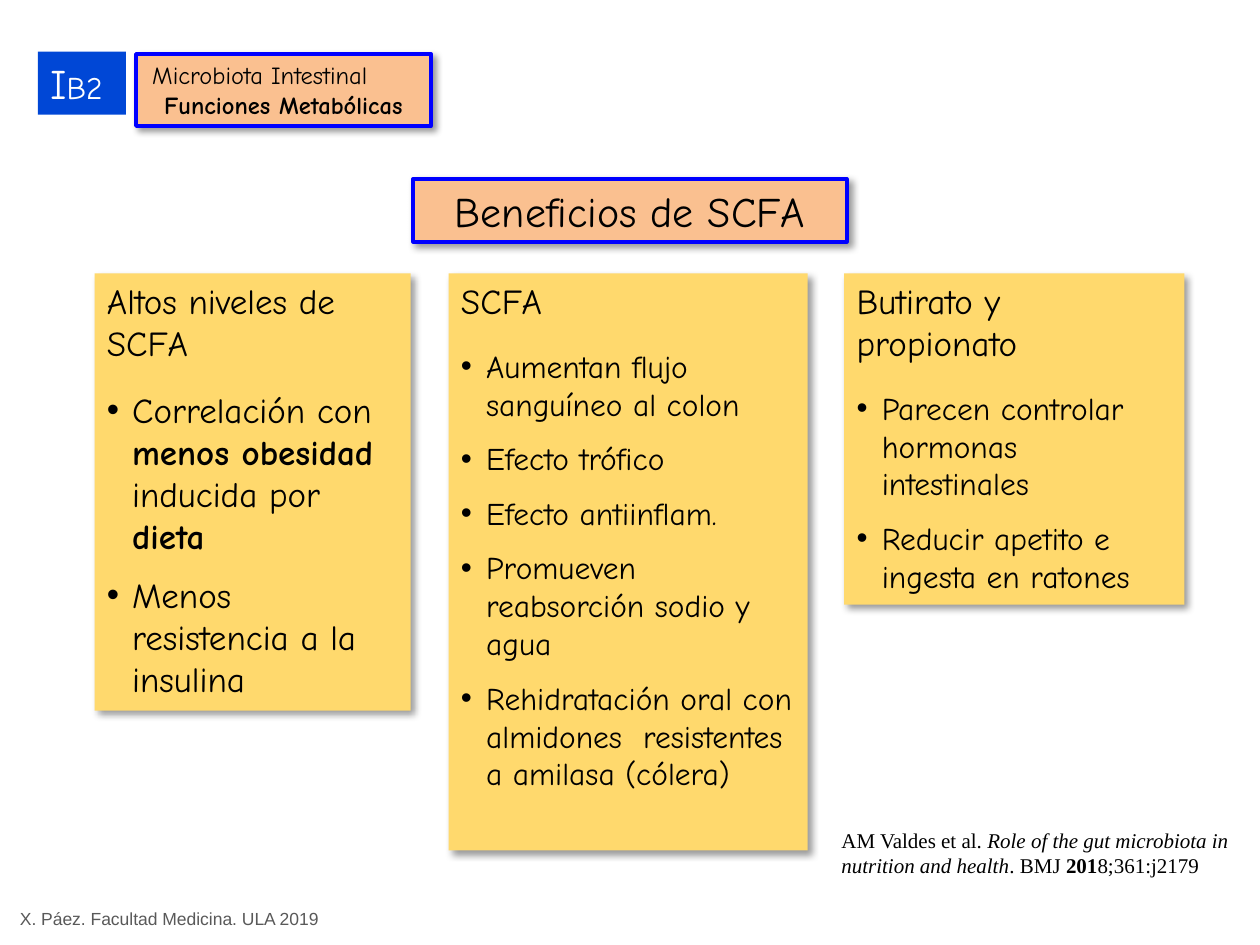
from dataclasses import dataclass

from lxml.etree import SubElement
from pptx import Presentation
from pptx.dml.color import RGBColor
from pptx.enum.shapes import MSO_SHAPE as Shape
from pptx.enum.text import MSO_ANCHOR as Anchor, PP_ALIGN as Align
from pptx.oxml import parse_xml
from pptx.oxml.ns import nsdecls, qn
from pptx.util import Inches, Pt


@dataclass(frozen=True)
class Theme:
    hand: str = "Comic Neue"
    sans: str = "Arial"
    serif: str = "Times New Roman"
    black: str = "000000"
    white: str = "FFFFFF"
    gray: str = "595959"
    badge: str = "0047D6"
    border: str = "0000FF"
    peach: str = "FAC090"
    yellow: str = "FFD96D"
    title: int = 24
    heading: int = 20
    body: int = 18
    small: int = 14
    citation: int = 12
    footer: int = 10
    heading_gap: float = 14.4
    item_gap: float = 9.6


THEME = Theme()
COLUMN_TOP = 2.17
HANG = 0.2

COLUMNS = [
    {"left": 0.75, "width": 2.51, "height": 3.47, "size": THEME.heading,
     "heading": "Altos niveles de SCFA",
     "items": [
         [[("Correlación con ", ""), ("menos obesidad ", "b"),
           ("inducida por ", ""), ("dieta", "b")]],
         [[("Menos", "")], [("resistencia a la insulina", "")]],
     ]},
    {"left": 3.56, "width": 2.85, "height": 4.58, "size": THEME.body,
     "heading": "SCFA",
     "items": [
         [[("Aumentan flujo sanguíneo al colon", "")]],
         [[("Efecto trófico", "")]],
         [[("Efecto antiinflam.", "")]],
         [[("Promueven reabsorción sodio y agua", "")]],
         [[("Rehidratación oral con almidones  resistentes a amilasa (cólera)", "")]],
     ]},
    {"left": 6.7, "width": 2.7, "height": 2.63, "size": THEME.body,
     "heading": "Butirato y propionato",
     "items": [
         [[("Parecen controlar hormonas intestinales", "")]],
         [[("Reducir apetito e ingesta en ratones", "")]],
     ]},
]

CITATION = [
    ("AM Valdes et al. ", ""),
    ("Role of the gut microbiota in nutrition and health", "i"),
    (". BMJ ", ""), ("201", "b"), ("8;361:j2179", ""),
]


def add_span(para, text, size, font=THEME.hand, color=THEME.black, style=""):
    span = para.add_run()
    span.text = text
    span.font.name = font
    span.font.size = Pt(size)
    span.font.color.rgb = RGBColor.from_string(color)
    span.font.bold = "b" in style
    span.font.italic = "i" in style


def add_para(frame, first=False, align=Align.LEFT):
    para = frame.paragraphs[0] if first else frame.add_paragraph()
    para.alignment = align
    return para


def indent(para, left, first_line=0.0, bullet=""):
    props = para._p.get_or_add_pPr()
    props.set("marL", str(Inches(left)))
    props.set("indent", str(Inches(first_line)))
    if bullet:
        SubElement(props, qn("a:buFont")).set("typeface", THEME.sans)
        SubElement(props, qn("a:buChar")).set("char", bullet)


def add_shadow(box):
    box._element.spPr.append(parse_xml(
        f'<a:effectLst {nsdecls("a")}><a:outerShdw blurRad="{Pt(4)}" '
        f'dist="{Pt(3)}" dir="2700000" algn="tl" rotWithShape="0">'
        f'<a:srgbClr val="{THEME.black}"><a:alpha val="40000"/></a:srgbClr>'
        '</a:outerShdw></a:effectLst>'))


def add_panel(page, bounds, fill, border=None, shadow=True):
    box = page.shapes.add_shape(Shape.RECTANGLE, *map(Inches, bounds))
    box.fill.solid()
    box.fill.fore_color.rgb = RGBColor.from_string(fill)
    if border:
        box.line.color.rgb = RGBColor.from_string(border)
        box.line.width = Pt(2.25)
    else:
        box.line.fill.background()
    if shadow:
        add_shadow(box)
    else:
        box.shadow.inherit = False
    box.text_frame.word_wrap = True
    box.text_frame.vertical_anchor = Anchor.TOP
    return box.text_frame


def add_label(page, bounds, wrap):
    frame = page.shapes.add_textbox(*map(Inches, bounds)).text_frame
    frame.word_wrap = wrap
    return add_para(frame, first=True)


def add_column(page, column):
    bounds = (column["left"], COLUMN_TOP, column["width"], column["height"])
    frame = add_panel(page, bounds, THEME.yellow)
    add_span(add_para(frame, first=True), column["heading"], THEME.heading)
    for number, item in enumerate(column["items"]):
        for row, spans in enumerate(item):
            para = add_para(frame)
            if row == 0:
                indent(para, HANG, -HANG, "•")
                para.space_before = Pt(THEME.item_gap if number else THEME.heading_gap)
            else:
                indent(para, HANG)
            for text, style in spans:
                add_span(para, text, column["size"], style=style)


def main():
    """Build the slide on the benefits of short-chain fatty acids."""
    deck = Presentation()
    deck.slide_width, deck.slide_height = Inches(10), Inches(7.5)
    page = deck.slides.add_slide(deck.slide_layouts[6])

    badge = add_para(add_panel(page, (0.3, 0.41, 0.7, 0.5), THEME.badge, shadow=False), first=True)
    add_span(badge, "I", THEME.title, color=THEME.white)
    add_span(badge, "B2", THEME.body, color=THEME.white)

    topic = add_panel(page, (1.08, 0.43, 2.34, 0.57), THEME.peach, THEME.border)
    subject = add_para(topic, first=True)
    indent(subject, 0.03)
    add_span(subject, "Microbiota Intestinal", THEME.small)
    add_span(add_para(topic, align=Align.CENTER), "Funciones Metabólicas", THEME.small, style="b")

    title = add_panel(page, (3.28, 1.42, 3.44, 0.5), THEME.peach, THEME.border)
    add_span(add_para(title, first=True, align=Align.CENTER), "Beneficios de SCFA", THEME.title)

    for column in COLUMNS:
        add_column(page, column)

    citation = add_label(page, (6.58, 6.52, 3.33, 0.5), wrap=True)
    for text, style in CITATION:
        add_span(citation, text, THEME.citation, THEME.serif, style=style)

    footer = add_label(page, (0.06, 7.16, 2.59, 0.27), wrap=False)
    add_span(footer, "X. Páez. Facultad Medicina. ULA 2019", THEME.footer, THEME.sans, THEME.gray)

    deck.save("out.pptx")


if __name__ == "__main__":
    main()
